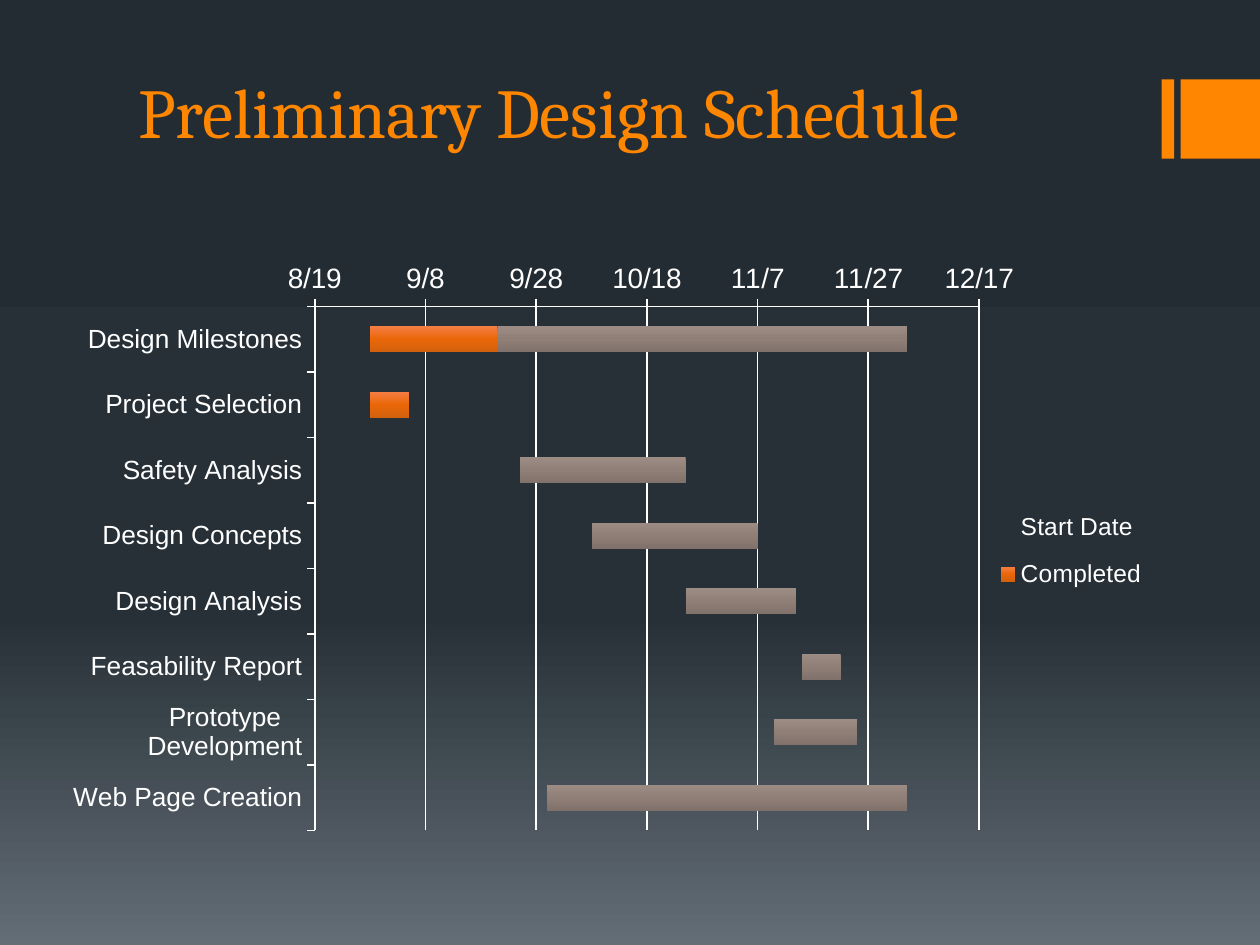
from lxml import etree
from pptx import Presentation
from pptx.chart.data import CategoryChartData
from pptx.dml.color import RGBColor
from pptx.enum.chart import XL_CHART_TYPE, XL_LEGEND_POSITION, XL_TICK_MARK
from pptx.enum.shapes import MSO_SHAPE
from pptx.enum.text import MSO_ANCHOR
from pptx.oxml import parse_xml
from pptx.oxml.ns import nsdecls, qn
from pptx.util import Inches, Pt

BAR_STACKED = XL_CHART_TYPE.BAR_STACKED
LEGEND_RIGHT = XL_LEGEND_POSITION.RIGHT
TICK_OUT = XL_TICK_MARK.OUTSIDE
RECTANGLE = MSO_SHAPE.RECTANGLE
BOTTOM = MSO_ANCHOR.BOTTOM

# Content
TITLE = "Preliminary Design Schedule"
SERIES_NAMES = ("Start Date", "Completed", "Remaining")
TASKS = [  # task, start (day serial), days completed, days remaining
    ("Design Milestones", 41880, 23, 74),
    ("Project Selection", 41880, 7, 0),
    ("Safety Analysis", 41907, 0, 30),
    ("Design Concepts", 41920, 0, 30),
    ("Design Analysis", 41937, 0, 20),
    ("Feasability Report", 41958, 0, 7),
    ("Prototype Development", 41953, 0, 15),
    ("Web Page Creation", 41912, 0, 65),
]
FIRST_DAY, LAST_DAY, DAY_STEP = 41870, 41990, 20

# Style
ORANGE, WHITE = "FF8600", "FFFFFF"
BACKGROUND = [(0, "242C33"), (65, "273037"), (100, "636D76")]
BAR_GRADIENTS = {
    "Completed": [(0, "F57E45"), (50, "EA6708"), (100, "D2610C")],
    "Remaining": [(0, "9C8C84"), (50, "8F7F77"), (100, "80716A")],
}
PLOT_AREA = (0.242, 0.117, 0.6, 0.822)
LEGEND_AREA = (0.85, 0.41, 0.15, 0.18)


def color(hex_code):
    return RGBColor.from_string(hex_code)


def apply_gradient(fill, owner, stops):
    """Fill from top to bottom with (percent, colour) stops."""
    fill.gradient()
    fill.gradient_angle = 270
    stop_list = next(owner.iter(qn("a:gsLst")))
    for old_stop in list(stop_list):
        stop_list.remove(old_stop)
    for percent, hex_code in stops:
        stop = etree.SubElement(stop_list, qn("a:gs"), pos=str(percent * 1000))
        etree.SubElement(stop, qn("a:srgbClr"), val=hex_code)


def format_font(font, size, hex_code=WHITE, name="Arial"):
    font.size, font.name, font.bold = Pt(size), name, False
    font.color.rgb = color(hex_code)


def add_text(slide, text, box, size, hex_code, font, anchor):
    frame = slide.shapes.add_textbox(*map(Inches, box)).text_frame
    frame.word_wrap = True
    frame.vertical_anchor = anchor
    run = frame.paragraphs[0].add_run()
    run.text = text
    format_font(run.font, size, hex_code, font)


def make_layout(area, inner=False):
    target = '<c:layoutTarget val="inner"/>' if inner else ""
    modes = "".join(f'<c:{side}Mode val="edge"/>' for side in "xy")
    lengths = "".join(f'<c:{key} val="{share}"/>' for key, share in zip("xywh", area))
    return parse_xml(
        f'<c:layout {nsdecls("c")}><c:manualLayout>{target}{modes}{lengths}'
        "</c:manualLayout></c:layout>"
    )


def style_axis(axis, size):
    format_font(axis.tick_labels.font, size)
    axis.major_tick_mark = TICK_OUT
    axis.format.line.color.rgb = color(WHITE)
    axis.format.line.width = Pt(1)


def add_schedule(slide, box):
    names, *columns = zip(*TASKS)
    data = CategoryChartData()
    data.categories = names
    for series_name, values in zip(SERIES_NAMES, columns):
        data.add_series(series_name, values)
    chart = slide.shapes.add_chart(BAR_STACKED, *map(Inches, box), data).chart
    format_font(chart.font, 10)
    chart.has_title = False

    # Bars: the start date series only offsets the others
    plot = chart.plots[0]
    plot.gap_width, plot.overlap, plot.vary_by_categories = 150, 100, False
    for series in plot.series:
        series.invert_if_negative = False
        fill = series.format.fill
        if series.name in BAR_GRADIENTS:
            apply_gradient(fill, series._element, BAR_GRADIENTS[series.name])
        else:
            fill.background()

    # Axes: tasks run downwards, dates along the top
    tasks, dates = chart.category_axis, chart.value_axis
    style_axis(tasks, 15)
    tasks.reverse_order = True
    style_axis(dates, 16)
    dates.minimum_scale, dates.maximum_scale = FIRST_DAY, LAST_DAY
    dates.major_unit = DAY_STEP
    dates.tick_labels.number_format = "m/d;@"
    dates.tick_labels.number_format_is_linked = False
    dates.has_major_gridlines = True
    dates.major_gridlines.format.line.color.rgb = color(WHITE)
    dates.major_gridlines.format.line.width = Pt(1)

    # Legend with one entry hidden
    chart.has_legend = True
    legend = chart.legend
    legend.position = LEGEND_RIGHT
    legend.include_in_layout = False
    format_font(legend.font, 14)
    hidden_entry = parse_xml(
        f'<c:legendEntry {nsdecls("c")}><c:idx val="0"/><c:delete val="1"/></c:legendEntry>'
    )
    replace_layout(legend._element, make_layout(LEGEND_AREA), 1)
    legend._element.insert(1, hidden_entry)
    plot_area = next(chart._chartSpace.iter(qn("c:plotArea")))
    replace_layout(plot_area, make_layout(PLOT_AREA, inner=True), 0)


def replace_layout(owner, layout, position):
    for old_layout in owner.findall(qn("c:layout")):
        owner.remove(old_layout)
    owner.insert(position, layout)


def main():
    deck = Presentation()
    deck.slide_width, deck.slide_height = Inches(10), Inches(7.5)
    slide = deck.slides.add_slide(deck.slide_layouts[6])
    apply_gradient(slide.background.fill, slide._element, BACKGROUND)

    # Accent blocks at the right edge
    for left, width in ((9.22, 0.1), (9.37, 0.63)):
        block = slide.shapes.add_shape(
            RECTANGLE, *map(Inches, (left, 0.63, width, 0.63))
        )
        block.shadow.inherit = False
        block.fill.solid()
        block.fill.fore_color.rgb = color(ORANGE)
        block.line.fill.background()

    add_text(slide, TITLE, (1, 0.35, 8, 0.91), size=40, hex_code=ORANGE,
             font="Cambria", anchor=BOTTOM)
    add_schedule(slide, (0.37, 1.84, 8.79, 5.06))
    deck.save("out.pptx")


if __name__ == "__main__":
    main()
